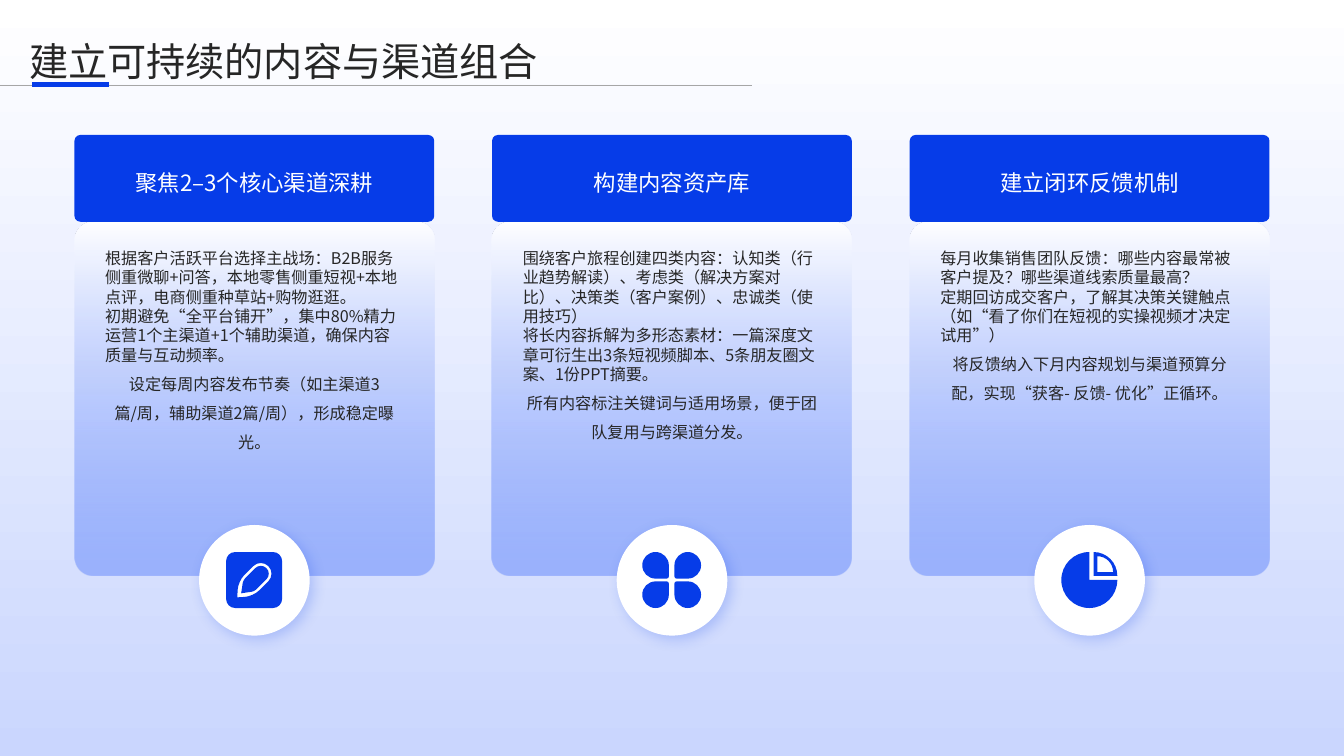
from lxml.etree import SubElement
from pptx import Presentation
from pptx.dml.color import RGBColor
from pptx.enum.shapes import MSO_CONNECTOR, MSO_SHAPE
from pptx.enum.text import MSO_ANCHOR, PP_ALIGN
from pptx.oxml.ns import qn
from pptx.util import Pt

COLORS = {"white": "FFFFFF", "blue": "063CE8", "soft": "6085FB",
          "sky": "CAD6FE", "ink": "262626", "gray": "A6A6A6"}
FONT = "Noto Sans CJK SC"


def rounded(corners, k=0.5523):
    """Points (x, y, starts_curve) of a polygon whose corners (x, y, cut) are rounded."""
    points = []
    for i, (x, y, cut) in enumerate(corners):
        if not cut:
            points.append((x, y, False))
            continue
        ends = []
        for nx, ny, _ in (corners[i - 1], corners[(i + 1) % len(corners)]):
            length = ((nx - x) ** 2 + (ny - y) ** 2) ** 0.5
            ends.append((x + (nx - x) * cut / length, y + (ny - y) * cut / length))
        a, d = ends
        b, c = [(ex + (x - ex) * k, ey + (y - ey) * k) for ex, ey in ends]
        points += [(*a, False), (*b, True), (*c, False), (*d, False)]
    return points


def box(x, y, w, h, cuts):
    """Rectangle with one cut per corner, clockwise from top left."""
    spots = ((x, y), (x + w, y), (x + w, y + h), (x, y + h))
    return [(px, py, cut) for (px, py), cut in zip(spots, cuts)]


class Deck:
    def __init__(self):
        self.prs = Presentation()
        self.prs.slide_width, self.prs.slide_height = Pt(960), Pt(540)
        self.s = self.prs.slides.add_slide(self.prs.slide_layouts[6])

    def color(self, name):
        return RGBColor.from_string(COLORS[name])

    def finish(self, sp, fill):
        sp.shadow.inherit = False
        sp.line.fill.background()
        if fill:
            sp.fill.solid()
            sp.fill.fore_color.rgb = self.color(fill)
        return sp

    def shape(self, kind, x, y, w, h, fill=None, adj=None):
        sp = self.s.shapes.add_shape(kind, Pt(x), Pt(y), Pt(w), Pt(h))
        if adj is not None:
            sp.adjustments[0] = adj
        return self.finish(sp, fill)

    def gradient(self, sp, end, position=1.0, alpha=None):
        sp.fill.gradient()
        sp.fill.gradient_angle = 270
        first, last = sp.fill.gradient_stops
        first.position, last.position = 0, position
        first.color.rgb, last.color.rgb = self.color("white"), self.color(end)
        if alpha:
            clr = sp._element.spPr.findall(".//" + qn("a:srgbClr"))[-1]
            SubElement(clr, qn("a:alpha"), val=str(alpha * 1000))

    def glow(self, sp):
        effects = sp._element.spPr.find(qn("a:effectLst"))
        shadow = SubElement(effects, qn("a:outerShdw"), blurRad=str(Pt(10)),
                            dist=str(Pt(4)), dir="2700000", algn="tl", rotWithShape="0")
        clr = SubElement(shadow, qn("a:srgbClr"), val=COLORS["blue"])
        SubElement(clr, qn("a:alpha"), val="20000")

    def icon(self, x, y, outlines):
        fb, curves = None, []
        for corners in outlines:
            points = rounded(corners)
            curves += [starts for _, _, starts in points]
            pts = [(px * 100, py * 100) for px, py, _ in points]
            if fb is None:
                fb = self.s.shapes.build_freeform(*pts[0], scale=Pt(1) / 100)
            else:
                fb.move_to(*pts[0])
            fb.add_line_segments(pts[1:], close=True)
        sp = self.finish(fb.convert_to_shape(Pt(x), Pt(y)), "blue")
        # Join each run of three curve points into one Bezier segment
        outline = sp._element.spPr.find(".//" + qn("a:pathLst"))[0]
        # The closing line back to the start of each contour is left out of the count
        steps = []
        for node in list(outline):
            if node.tag in (qn("a:moveTo"), qn("a:lnTo")):
                steps.append(node)
            elif steps and len(steps) > len(curves):
                steps.pop()
        for i, starts in enumerate(curves):
            if starts:
                steps[i].tag = qn("a:cubicBezTo")
                for node in steps[i + 1:i + 3]:
                    steps[i].append(node[0])
                    outline.remove(node)

    def text(self, x, y, w, h, paras, size, color, anchor=MSO_ANCHOR.TOP, inset=(0, 0)):
        """Each paragraph is (text, alignment, line spacing)."""
        tf = self.s.shapes.add_textbox(Pt(x), Pt(y), Pt(w), Pt(h)).text_frame
        tf.word_wrap = True
        tf.vertical_anchor = anchor
        tf.margin_left = tf.margin_right = Pt(inset[0])
        tf.margin_top = tf.margin_bottom = Pt(inset[1])
        for i, (words, align, spacing) in enumerate(paras):
            p = tf.add_paragraph() if i else tf.paragraphs[0]
            p.text = words
            p.alignment, p.line_spacing = align, spacing
            p._p.get_or_add_pPr().set("hangingPunct", "0")
            for r in p.runs:
                r.font.name, r.font.size = FONT, Pt(size)
                r.font.color.rgb = self.color(color)
                SubElement(r._r.get_or_add_rPr(), qn("a:ea"), typeface=FONT)

    def line(self, x1, x2, y, color, width):
        c = self.s.shapes.add_connector(MSO_CONNECTOR.STRAIGHT, Pt(x1), Pt(y), Pt(x2), Pt(y))
        c.line.color.rgb = self.color(color)
        c.line.width = Pt(width)
        SubElement(c._element.spPr, qn("a:effectLst"))


# Icons, drawn in a square of 40 points
PEN = [
    box(0, 0, 40, 40, [6.5] * 4),
    [(8, 32.4, 0), (8.6, 20.9, 6), (24.8, 4.7, 7.6), (35.6, 15.5, 7.6), (19.4, 31.7, 6)],
    [(10.8, 29.5, 0), (12.2, 20.2, 2), (24.8, 7.6, 5.5), (32.8, 15.5, 5.5), (20.2, 28.1, 2)],
]
PETALS = [
    box(x, y, 19, 19, [1.5 if corner == inner else 9.5 for corner in range(4)])
    for x, y, inner in ((-1, 0, 2), (22, 0, 3), (22, 21, 0), (-1, 21, 1))
]
PIE = [
    [(20, 0, 0), (20, 20, 0), (40, 20, 0), (40, 40, 20), (0, 40, 20), (0, 0, 20)],
    box(23, 0, 17, 17, [0, 17, 0, 0]),
    box(25.7, 3, 11.3, 11.3, [0, 11.3, 0, 0]),
]

CARDS = [
    ("聚焦2–3个核心渠道深耕", PEN, [
        "根据客户活跃平台选择主战场：B2B服务侧重微聊+问答，本地零售侧重短视+本地点评，电商侧重种草站+购物逛逛。",
        "初期避免“全平台铺开”，集中80%精力运营1个主渠道+1个辅助渠道，确保内容质量与互动频率。",
        "设定每周内容发布节奏（如主渠道3篇/周，辅助渠道2篇/周），形成稳定曝光。"]),
    ("构建内容资产库", PETALS, [
        "围绕客户旅程创建四类内容：认知类（行业趋势解读）、考虑类（解决方案对比）、决策类（客户案例）、忠诚类（使用技巧）",
        "将长内容拆解为多形态素材：一篇深度文章可衍生出3条短视频脚本、5条朋友圈文案、1份PPT摘要。",
        "所有内容标注关键词与适用场景，便于团队复用与跨渠道分发。"]),
    ("建立闭环反馈机制", PIE, [
        "每月收集销售团队反馈：哪些内容最常被客户提及？哪些渠道线索质量最高？",
        "定期回访成交客户，了解其决策关键触点（如“看了你们在短视的实操视频才决定试用”）",
        "将反馈纳入下月内容规划与渠道预算分配，实现“获客- 反馈- 优化”正循环。"]),
]


def main():
    d = Deck()
    left, center = PP_ALIGN.LEFT, PP_ALIGN.CENTER

    # Background
    d.gradient(d.shape(MSO_SHAPE.RECTANGLE, 0, 0, 960, 540), "sky")

    # Three cards
    for i, (heading, outlines, body) in enumerate(CARDS):
        x = 53.2 + i * 298.3
        mid = x + 128.5
        panel = d.shape(MSO_SHAPE.ROUNDED_RECTANGLE, x, 158.4, 257, 252.7, adj=0.053)
        d.gradient(panel, "soft", 0.95, 50)
        d.shape(MSO_SHAPE.ROUNDED_RECTANGLE, x, 96.4, 257, 62, "blue", 0.068)
        d.glow(d.shape(MSO_SHAPE.OVAL, mid - 39.5, 375, 79, 79, "white"))
        d.icon(mid - 20.2, 394.3, outlines)
        paras = [(words, left, 1.0) for words in body[:-1]] + [(body[-1], center, 1.5)]
        d.text(mid - 106.6, 177.5, 213.2, 178, paras, 11.5, "ink")
        d.text(mid - 104.8, 96.4, 209.6, 62, [(heading, center, 1.3)], 16, "white",
               MSO_ANCHOR.MIDDLE)

    # Title and rules
    d.text(13.7, 19.8, 900.7, 44.6, [("建立可持续的内容与渠道组合", left, 1.1)], 28, "ink",
           inset=(7.2, 3.6))
    d.line(0, 537, 60.8, "gray", 0.5)
    d.line(22.8, 77.8, 60.5, "blue", 3.5)

    d.prs.save("out.pptx")


if __name__ == "__main__":
    main()
